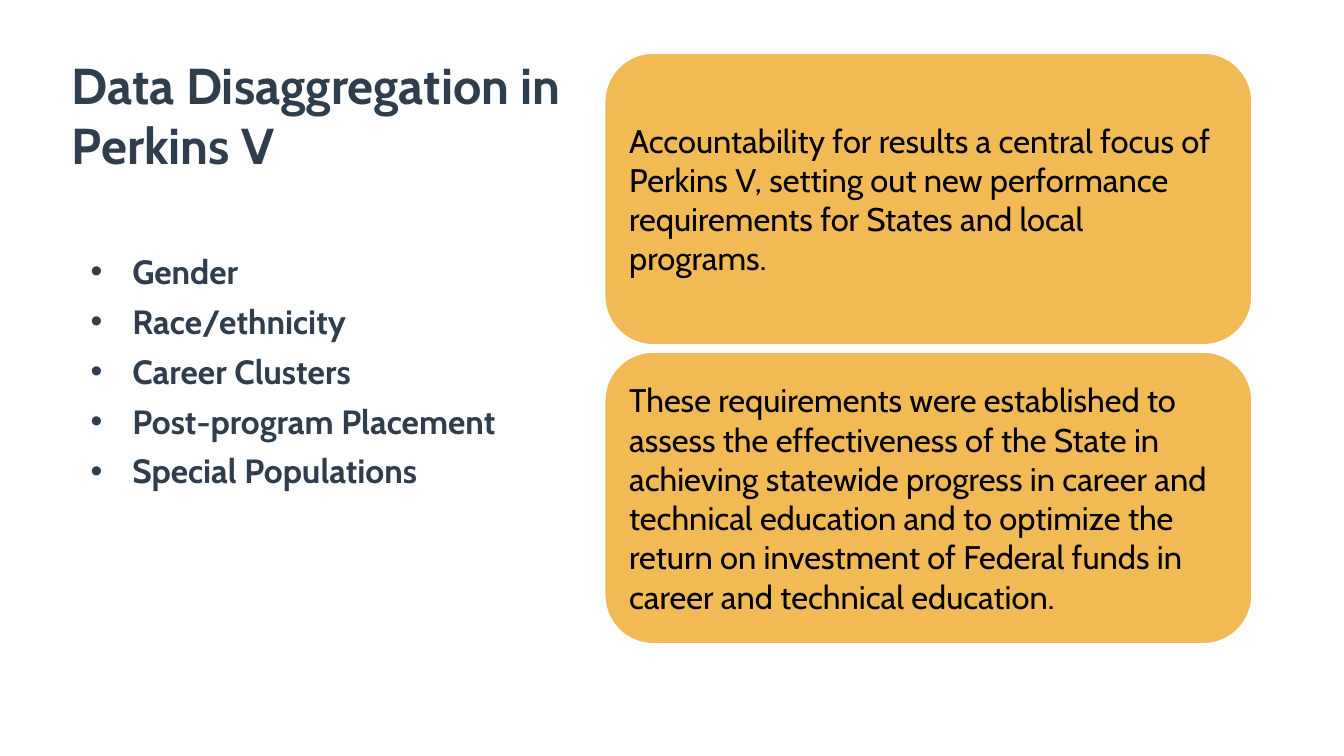
from pptx import Presentation
from pptx.dml.color import RGBColor
from pptx.enum.shapes import MSO_SHAPE as SHAPE
from pptx.enum.text import MSO_ANCHOR as ANCHOR, PP_ALIGN as ALIGN
from pptx.oxml.ns import qn
from pptx.util import Pt
from lxml import etree

NAVY = RGBColor(0x2F, 0x3D, 0x4C)
AMBER = RGBColor(0xF1, 0xBA, 0x55)
BLACK = RGBColor(0, 0, 0)
WHITE = RGBColor(0xFF, 0xFF, 0xFF)

TITLE = "Data Disaggregation in Perkins V"
CATEGORIES = ["Gender", "Race/ethnicity", "Career Clusters",
              "Post-program Placement", "Special Populations"]
STATEMENTS = [
    "Accountability for results a central focus of Perkins V, setting out new "
    "performance requirements for States and local programs.",
    "These requirements were established to assess the effectiveness of the State "
    "in achieving statewide progress in career and technical education and to "
    "optimize the return on investment of Federal funds in career and technical "
    "education.",
]


def px(n):
    return n * 9144


def apply(target, values):
    for name, value in values.items():
        setattr(target, name, value)


class Deck:
    title_font = dict(name="Cabin", size=Pt(54), bold=True)
    list_font = dict(name="Cabin", size=Pt(36), bold=True)
    card_font = dict(name="Cabin", size=Pt(35), bold=False)
    list_spacing = dict(line_spacing=1.1, space_after=Pt(6))
    hanging = 62
    card_inset = 15

    def __init__(self, width, height):
        self.prs = Presentation()
        apply(self.prs, dict(slide_width=px(width), slide_height=px(height)))
        self.s = self.prs.slides.add_slide(self.prs.slide_layouts[6])

    def add_text(self, p, text, font, color):
        r = p.add_run()
        r.text = text
        apply(r.font, font)
        r.font.color.rgb = color

    def text_frame(self, x, y, w, h):
        tf = self.s.shapes.add_textbox(px(x), px(y), px(w), px(h)).text_frame
        tf.word_wrap = True
        return tf

    def title(self, x, y, w, h, text):
        tf = self.text_frame(x, y, w, h)
        self.add_text(tf.paragraphs[0], text, self.title_font, NAVY)

    def bullets(self, x, y, w, h, items):
        tf = self.text_frame(x, y, w, h)
        for i, item in enumerate(items):
            p = tf.add_paragraph() if i else tf.paragraphs[0]
            pPr = p._p.get_or_add_pPr()
            pPr.set("marL", str(px(self.hanging)))
            pPr.set("indent", str(px(-self.hanging)))
            etree.SubElement(pPr, qn("a:buFont")).set("typeface", "Arial")
            etree.SubElement(pPr, qn("a:buChar")).set("char", "•")
            apply(p, self.list_spacing)
            self.add_text(p, item, self.list_font, NAVY)

    def card(self, x, y, w, h, text):
        sp = self.s.shapes.add_shape(SHAPE.ROUNDED_RECTANGLE, px(x), px(y), px(w), px(h))
        sp.shadow.inherit = False
        sp.fill.solid()
        sp.fill.fore_color.rgb = AMBER
        sp.line.color.rgb = WHITE
        sp.line.width = Pt(1.5)
        tf = sp.text_frame
        sides = ("left", "top", "right", "bottom")
        apply(tf, {f"margin_{side}": px(self.card_inset) for side in sides})
        apply(tf, dict(word_wrap=True, vertical_anchor=ANCHOR.MIDDLE))
        p = tf.paragraphs[0]
        p.alignment = ALIGN.LEFT
        self.add_text(p, text, self.card_font, BLACK)


def main():
    deck = Deck(2000, 1125)
    deck.title(97, 75, 762, 238, TITLE)
    deck.bullets(125, 362, 669, 629, CATEGORIES)
    top, height, gap = 79, 434, 11
    for i, statement in enumerate(STATEMENTS):
        deck.card(900, top + i * (height + gap), 963, height, statement)
    deck.prs.save("out.pptx")


if __name__ == "__main__":
    main()
